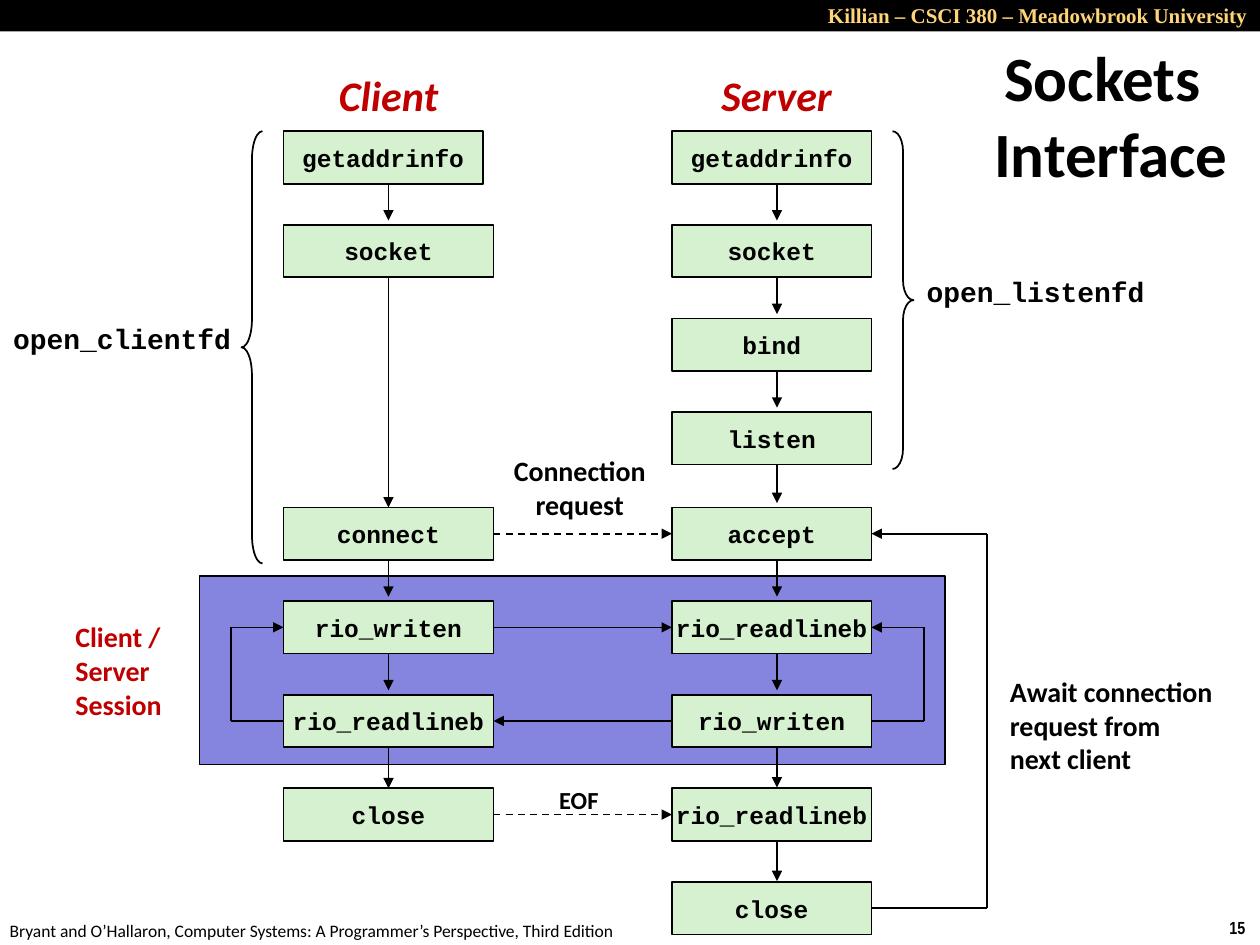
import lxml.etree
import pptx
import pptx.dml.color
import pptx.enum.dml
import pptx.enum.shapes
import pptx.enum.text
import pptx.oxml.ns
import pptx.util
from dataclasses import dataclass

SHAPE = pptx.enum.shapes.MSO_SHAPE
ANCHOR = pptx.enum.text.MSO_ANCHOR
ALIGN = pptx.enum.text.PP_ALIGN
Pt = pptx.util.Pt
TOP, LEFT, BOTTOM, RIGHT = range(4)


@dataclass(frozen=True)
class Theme:
    ink: str = "000000"
    call: str = "D5F1CF"
    session: str = "8585E0"
    accent: str = "C00000"
    banner: str = "FFD579"
    body: str = "Calibri"
    code: str = "Courier New"
    serif: str = "Times New Roman"
    narrow: str = "Arial Narrow"
    title: int = 36
    heading: int = 24
    label: int = 16
    call_size: int = 14
    banner_size: int = 12
    footer: int = 10
    stroke: int = 1


class Diagram:
    def __init__(self, slide, theme):
        self.slide = slide
        self.theme = theme

    def colour(self, value):
        return pptx.dml.color.RGBColor.from_string(value)

    def fill_text(self, frame, lines, size, font=None, colour=None, bold=True,
                  italic=False, align=ALIGN.LEFT, anchor=ANCHOR.MIDDLE, wrap=False):
        frame.word_wrap = wrap
        frame.vertical_anchor = anchor
        for index, line in enumerate(lines):
            paragraph = frame.add_paragraph() if index else frame.paragraphs[0]
            paragraph.alignment = align
            run = paragraph.add_run()
            run.text = line
            run.font.name = font or self.theme.body
            run.font.size = Pt(size)
            run.font.bold = bold
            run.font.italic = italic
            run.font.color.rgb = self.colour(colour or self.theme.ink)

    def label(self, place, lines, size, **style):
        frame = self.slide.shapes.add_textbox(*map(Pt, place)).text_frame
        self.fill_text(frame, lines, size, **style)
        return frame

    def shape(self, kind, place, fill=None):
        shape = self.slide.shapes.add_shape(kind, *map(Pt, place))
        shape.shadow.inherit = False
        if fill:
            shape.fill.solid()
            shape.fill.fore_color.rgb = self.colour(fill)
        else:
            shape.fill.background()
        shape.line.color.rgb = self.colour(self.theme.ink)
        shape.line.width = Pt(self.theme.stroke)
        return shape

    def call(self, place, name):
        box = self.shape(SHAPE.RECTANGLE, place, self.theme.call)
        self.fill_text(box.text_frame, [name], self.theme.call_size,
                       font=self.theme.code, align=ALIGN.CENTER)
        return box

    def brace(self, kind, place, curl):
        brace = self.shape(kind, place)
        brace.adjustments[0] = curl
        brace.adjustments[1] = 0.5

    def line(self, start, end, arrow=True, dashed=False):
        free = [isinstance(stop[0], (int, float)) for stop in (start, end)]
        begin_point = start if free[0] else (0, 0)
        end_point = end if free[1] else (0, 0)
        line = self.slide.shapes.add_connector(
            pptx.enum.shapes.MSO_CONNECTOR.STRAIGHT, *map(Pt, begin_point + end_point))
        if not free[0]:
            line.begin_connect(*start)
        if not free[1]:
            line.end_connect(*end)
        line.line.color.rgb = self.colour(self.theme.ink)
        line.line.width = Pt(self.theme.stroke)
        if dashed:
            line.line.dash_style = pptx.enum.dml.MSO_LINE.DASH
        qn = pptx.oxml.ns.qn
        properties = line.element.spPr
        if arrow:
            lxml.etree.SubElement(properties.find(qn("a:ln")), qn("a:tailEnd"), type="triangle")
        lxml.etree.SubElement(properties, qn("a:effectLst"))

    def loop(self, source, target, side, x, source_y, target_y):
        self.line((source, side), (x, source_y), arrow=False)
        self.line((x, source_y), (x, target_y), arrow=False)
        self.line((x, target_y), (target, side))


CALL_HEIGHT, ROW_STEP = 30, 53.5
CLIENT_LEFT, SERVER_LEFT = 162, 384
CLIENT_AXIS, SERVER_AXIS = 222, 444
CLIENT_CALLS = {0: "getaddrinfo", 1: "socket", 4: "connect", 5: "rio_writen",
                6: "rio_readlineb", 7: "close"}
SERVER_CALLS = ["getaddrinfo", "socket", "bind", "listen", "accept",
                "rio_readlineb", "rio_writen", "rio_readlineb", "close"]


def row_top(row):
    return 75 + ROW_STEP * row + (1 if row >= 4 else 0)


def row_middle(row):
    return row_top(row) + CALL_HEIGHT / 2


def arrow_tip(row):
    return row_top(row) - (2.5 if row < 7 else 0.5)


def main():
    deck = pptx.Presentation()
    deck.slide_width, deck.slide_height = Pt(720), Pt(540)
    theme = Theme()
    diagram = Diagram(deck.slides.add_slide(deck.slide_layouts[6]), theme)

    diagram.label((695.5, 520.5, 24.5, 19.5), ["15"], theme.footer,
                  font=theme.narrow, anchor=ANCHOR.TOP)
    diagram.label((-1.5, 522, 366, 19.5),
                  ["Bryant and O’Hallaron, Computer Systems: A Programmer’s Perspective, Third Edition"],
                  theme.footer, bold=False, anchor=ANCHOR.TOP)
    banner = diagram.shape(SHAPE.RECTANGLE, (0, 0, 720, 18), theme.ink)
    banner.line.fill.background()
    diagram.label((324, -2, 396, 21.5), ["Killian – CSCI 380 – Meadowbrook University"],
                  theme.banner_size, font=theme.serif, colour=theme.banner,
                  align=ALIGN.RIGHT, anchor=ANCHOR.TOP, wrap=True)

    title = diagram.label((546, 18, 168, 94.5), ["Sockets Interface"], theme.title,
                          align=ALIGN.CENTER, wrap=True)
    indent = title.paragraphs[0]._p.get_or_add_pPr()
    indent.set("marL", str(Pt(9.4)))
    indent.set("indent", str(Pt(-9.4)))
    for name, left, width in (("Client", 186, 72), ("Server", 404.5, 78.5)):
        diagram.label((left, 36, width, 36), [name], theme.heading,
                      colour=theme.accent, italic=True, align=ALIGN.CENTER)

    diagram.shape(SHAPE.RECTANGLE, (114, 329, 426, 108), theme.session)
    client = {row: diagram.call((CLIENT_LEFT, row_top(row), 120 if row else 114, CALL_HEIGHT), name)
              for row, name in CLIENT_CALLS.items()}
    server = [diagram.call((SERVER_LEFT, row_top(row), 114, CALL_HEIGHT), name)
              for row, name in enumerate(SERVER_CALLS)]

    for row in range(len(server) - 1):
        diagram.line((SERVER_AXIS, row_top(row) + CALL_HEIGHT), (SERVER_AXIS, arrow_tip(row + 1)))
    diagram.line((CLIENT_AXIS, row_top(0) + CALL_HEIGHT), (CLIENT_AXIS, arrow_tip(1)))
    for row in (4, 5):
        diagram.line((client[row], BOTTOM), (CLIENT_AXIS, arrow_tip(row + 1)))
    for row, following in ((1, 4), (6, 7)):
        diagram.line((client[row], BOTTOM), (client[following], TOP))

    for row in (4, 5, 7):
        diagram.line((client[row], RIGHT), (server[row], LEFT), dashed=row != 5)
    diagram.line((server[6], LEFT), (client[6], RIGHT))
    diagram.loop(client[6], client[5], LEFT, 132, row_middle(6), row_middle(5))
    diagram.loop(server[6], server[5], RIGHT, 528, row_middle(6), row_middle(5))
    diagram.loop(server[8], server[4], RIGHT, 564, row_middle(8), row_middle(4))

    diagram.brace(SHAPE.LEFT_BRACE, (138, 75, 12, 247), 1.333)
    diagram.brace(SHAPE.RIGHT_BRACE, (510, 75, 12, 193), 0.958)
    for name, left, top in (("open_clientfd", 0, 180), ("open_listenfd", 522, 153.5)):
        diagram.label((left, top, 139.5, 26.5), [name], theme.label,
                      font=theme.code, align=ALIGN.CENTER)

    diagram.label((36, 350.5, 66, 65), ["Client / Server", "Session"], theme.label,
                  colour=theme.accent, wrap=True)
    diagram.label((286, 255.5, 90.5, 46), ["Connection", "request"], theme.label,
                  align=ALIGN.CENTER)
    diagram.label((312, 445, 37.5, 24.5), ["EOF"], theme.call_size, align=ALIGN.CENTER)
    diagram.label((570, 381.5, 132, 65.5),
                  ["Await connection", "request from", "next client"], theme.label)

    deck.save("out.pptx")


if __name__ == "__main__":
    main()
